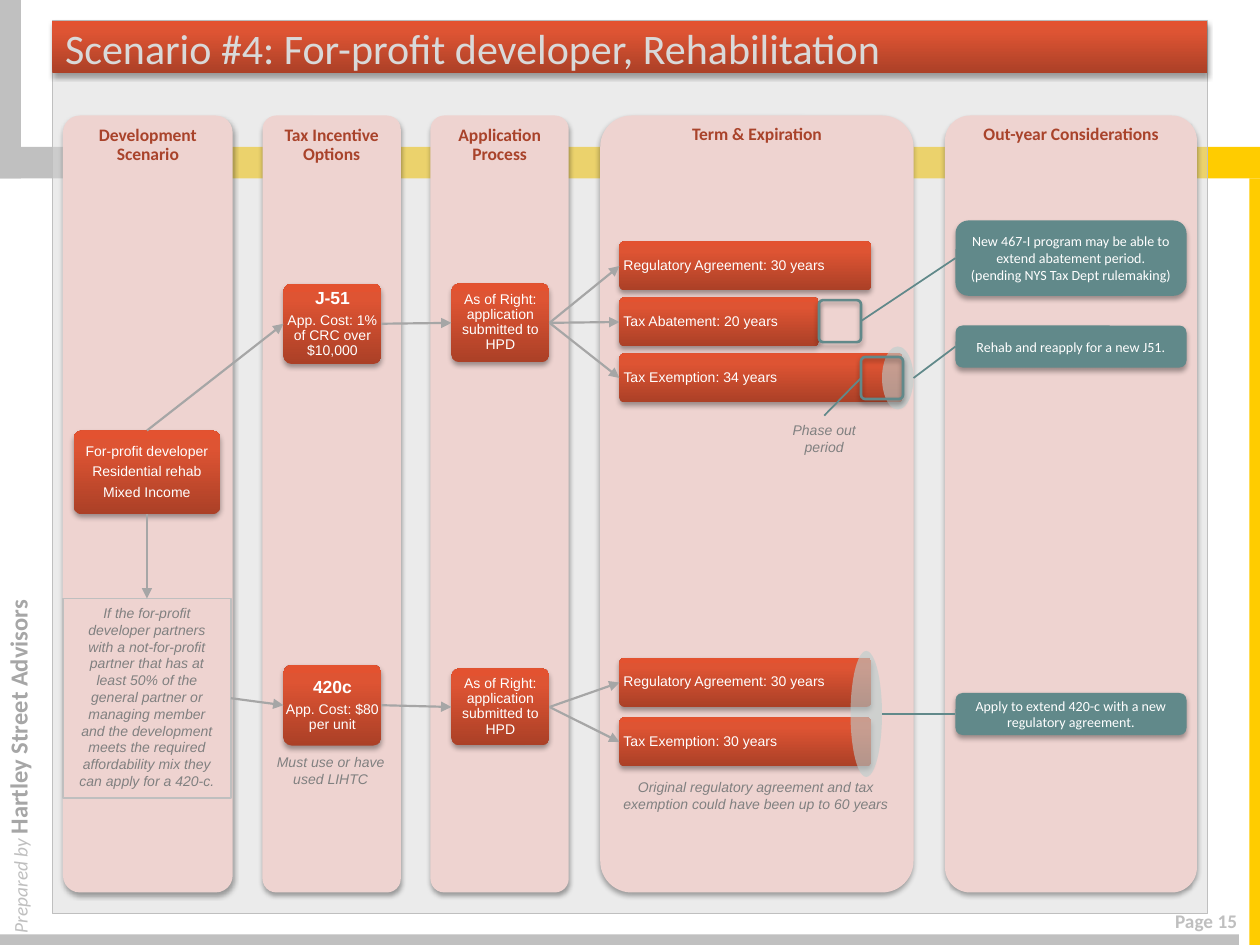
from lxml.etree import SubElement
from pptx import Presentation
from pptx.dml.color import RGBColor
from pptx.enum.shapes import MSO_CONNECTOR, MSO_SHAPE
from pptx.enum.text import MSO_ANCHOR, PP_ALIGN
from pptx.oxml import parse_xml
from pptx.oxml.ns import nsdecls, qn
from pptx.util import Pt

COLORS = {
    "silver": "C0C0C0", "gold": "FFCC00", "panel": "D9D9D9", "border": "BFBFBF",
    "column": "EED3D0", "header": "A9432B", "teal": "61898A", "haze": "BACECE",
    "arrow": "A6A6A6", "note": "808080", "white": "FFFFFF",
    "red_dark": "AB4027", "red_mid": "DE5433", "red_light": "E35230",
}
FONTS = {
    "title": {"name": "Calibri", "size": Pt(24)},
    "header": {"name": "Calibri", "size": Pt(10), "bold": True},
    "heading": {"name": "Arial", "size": Pt(10), "bold": True},
    "card": {"name": "Arial", "size": Pt(8)},
    "note": {"name": "Arial", "size": Pt(8), "italic": True},
    "outlook": {"name": "Calibri", "size": Pt(8)},
    "page": {"name": "Calibri", "size": Pt(11), "bold": True},
    "prepared": {"name": "Calibri", "size": Pt(11), "italic": True},
    "firm": {"name": "Calibri", "size": Pt(14), "bold": True},
}
COLUMN_TOP, COLUMN_HEIGHT = 66, 444
CARD_SPACING = {"line_spacing": 0.9, "space_after": Pt(3)}


def set_attributes(target, values):
    for name, value in values.items():
        setattr(target, name, value)


def rgb(color):
    return RGBColor.from_string(COLORS[color])


def add_run(paragraph, text, font, color):
    run = paragraph.add_run()
    run.text = text
    set_attributes(run.font, FONTS[font])
    run.font.color.rgb = rgb(color)


def write(shape, lines, color, align=PP_ALIGN.CENTER, anchor=MSO_ANCHOR.MIDDLE,
          inset=(7.2, 3.6), spacing=None):
    """Fill a shape with (text, font) lines."""
    frame = shape.text_frame
    across, down = map(Pt, inset)
    set_attributes(frame, {
        "word_wrap": True, "vertical_anchor": anchor, "margin_left": across,
        "margin_right": across, "margin_top": down, "margin_bottom": down})
    for index, (text, font) in enumerate(lines):
        paragraph = frame.add_paragraph() if index else frame.paragraphs[0]
        set_attributes(paragraph, {"alignment": align, **(spacing or {})})
        add_run(paragraph, text, font, color)


def add_shadow(shape):
    effects = shape._element.spPr.get_or_add_effectLst() if hasattr(
        shape._element.spPr, "get_or_add_effectLst") else None
    if effects is None:
        effects = shape._element.spPr.find(qn("a:effectLst"))
    effects.append(parse_xml(
        f'<a:outerShdw {nsdecls("a")} blurRad="39370" dist="22860" dir="5400000" '
        'rotWithShape="0"><a:srgbClr val="000000"><a:alpha val="35000"/>'
        '</a:srgbClr></a:outerShdw>'))


def fill_red(shape):
    """Vertical gradient, dark at the bottom."""
    stops = "".join(
        f'<a:gs pos="{position}000"><a:srgbClr val="{COLORS[color]}"/></a:gs>'
        for position, color in ((0, "red_dark"), (80, "red_mid"), (100, "red_light")))
    shape._element.spPr.find(qn("a:prstGeom")).addnext(parse_xml(
        f'<a:gradFill {nsdecls("a")} rotWithShape="1"><a:gsLst>{stops}</a:gsLst>'
        '<a:lin ang="16200000" scaled="0"/></a:gradFill>'))


def add_box(slide, box, fill=None, kind=MSO_SHAPE.RECTANGLE, line=None, width=0.75,
            alpha=None, corner=None, shadow=False):
    shape = slide.shapes.add_shape(kind, *map(Pt, box))
    shape.shadow.inherit = False
    if corner:
        shape.adjustments[0] = corner
    if fill == "red":
        fill_red(shape)
    elif fill:
        shape.fill.solid()
        shape.fill.fore_color.rgb = rgb(fill)
        if alpha:
            color = shape._element.spPr.find(qn("a:solidFill"))[0]
            SubElement(color, qn("a:alpha")).set("val", str(alpha * 1000))
    else:
        shape.fill.background()
    if line:
        shape.line.color.rgb = rgb(line)
        shape.line.width = Pt(width)
    else:
        shape.line.fill.background()
    if shadow:
        add_shadow(shape)
    return shape


def add_rounded(slide, box, fill=None, corner=0.1, **options):
    return add_box(slide, box, fill, MSO_SHAPE.ROUNDED_RECTANGLE,
                   corner=corner, shadow=True, **options)


def add_card(slide, box, *lines):
    card = add_rounded(slide, box, "red")
    write(card, lines, "white", inset=(0, 0), spacing=CARD_SPACING)
    return card


def add_bar(slide, box, text):
    bar = add_rounded(slide, box, "red")
    write(bar, [(text, "card")], "white", PP_ALIGN.LEFT, inset=(1.5, 0), spacing=CARD_SPACING)
    return bar


def add_note(slide, box, text, line=None):
    note = add_box(slide, box, line=line)
    write(note, [(text, "note")], "note", anchor=MSO_ANCHOR.TOP)
    return note


def edge(shape, side):
    across, down = {"left": (0, 0.5), "right": (1, 0.5), "top": (0.5, 0), "bottom": (0.5, 1)}[side]
    return int(shape.left + across * shape.width), int(shape.top + down * shape.height)


def link(slide, start, end, sides=("right", "left"), color="teal", arrow=False):
    points = edge(start, sides[0]) + edge(end, sides[1])
    connector = slide.shapes.add_connector(MSO_CONNECTOR.STRAIGHT, *points)
    connector.line.color.rgb = rgb(color)
    connector.line.width = Pt(1.25 if arrow else 1)
    if arrow:
        SubElement(connector.line._get_or_add_ln(), qn("a:tailEnd")).set("type", "triangle")
    SubElement(connector._element.spPr, qn("a:effectLst"))


def add_column(slide, left, width, header):
    """Draw a column and return a function that places boxes inside it."""
    box = (left, COLUMN_TOP, width, COLUMN_HEIGHT)
    add_rounded(slide, box, "column")
    label = slide.shapes.add_textbox(*map(Pt, (left, COLUMN_TOP, width, 133)))
    write(label, [(header, "header")], "header", anchor=MSO_ANCHOR.TOP,
          inset=(6, 6), spacing={"line_spacing": 0.9})
    return lambda x, y, w, h: (left + x, COLUMN_TOP + y, w, h)


def frame_page(slide, width, height):
    # Bars around the page
    for box, color in (((0, 84, 48, 18), "silver"), ((54, 84, width - 54, 18), "gold"),
                       ((width - 6, 102, 6, height - 102), "gold"),
                       ((0, height - 6, 708, 6), "silver"), ((0, 0, 12, 102), "silver")):
        add_box(slide, box, color)
    # Page number and author
    page = slide.shapes.add_textbox(*map(Pt, (474, 516, 240, 21)))
    write(page, [("Page 15", "page")], "border", PP_ALIGN.RIGHT, MSO_ANCHOR.TOP)
    author = slide.shapes.add_textbox(*map(Pt, (-124.5, 393, 270, 24.5)))
    author.rotation = 270
    write(author, [("Prepared by ", "prepared")], "border", PP_ALIGN.LEFT, MSO_ANCHOR.TOP)
    add_run(author.text_frame.paragraphs[0], "Hartley Street Advisors", "firm", "arrow")
    # Panel and title band
    add_box(slide, (30, 12, 660, 510), "panel", line="border", alpha=50)
    title = slide.shapes.title
    set_attributes(title, dict(zip(("left", "top", "width", "height"), map(Pt, (30, 12, 660, 30)))))
    slide.shapes._spTree.append(title._element)
    SubElement(title._element.spPr, qn("a:prstGeom")).set("prst", "rect")
    fill_red(title)
    SubElement(title._element.spPr, qn("a:effectLst"))
    add_shadow(title)
    write(title, [("Scenario #4: For-profit developer, Rehabilitation", "title")],
          "panel", PP_ALIGN.LEFT)


def add_development(slide, left, width):
    at = add_column(slide, left, width, "Development Scenario")
    developer = add_card(slide, at(6, 180, 84, 48), *(
        (text, "card") for text in ("For-profit developer", "Residential rehab", "Mixed Income")))
    partner = add_note(
        slide, at(0, 276, 96, 114),
        "If the for-profit developer partners with a not-for-profit partner that has at least "
        "50% of the general partner or managing member and the development meets the required "
        "affordability mix they can apply for a 420-c.", line="border")
    return developer, partner


def add_incentives(slide, left, width):
    at = add_column(slide, left, width, "Tax Incentive Options")
    add_note(slide, at(0, 361, 78, 27), "Must use or have used LIHTC")
    return [add_card(slide, at(12, y, 56, 46), (name, "heading"), (cost, "card"))
            for y, name, cost in ((96, "J-51", "App. Cost: 1% of CRC over $10,000"),
                                  (314, "420c", "App. Cost: $80 per unit"))]


def add_applications(slide, left, width):
    at = add_column(slide, left, width, "Application Process")
    return [add_card(slide, at(12, y, 56, h),
                     ("As of Right: application submitted to HPD", "card"))
            for y, h in ((96, 45), (316, 44))]


def add_terms(slide, left, width):
    at = add_column(slide, left, width, "Term & Expiration")
    bars = [add_bar(slide, at(11, y, w, 28), text) for y, w, text in (
        (72, 144, "Regulatory Agreement: 30 years"), (104, 114, "Tax Abatement: 20 years"),
        (136, 162, "Tax Exemption: 34 years"), (310, 144, "Regulatory Agreement: 30 years"),
        (344, 144, "Tax Exemption: 30 years"))]
    expirations = [add_box(slide, at(x, y, 18, h), "haze", MSO_SHAPE.OVAL, alpha=60)
                   for x, y, h in ((161, 132, 36), (143, 306, 72))]
    extension, phase_out = [add_rounded(slide, at(x, y, 24, 24), line="teal", width=1.5)
                            for x, y in ((125, 105.5), (149, 138))]
    phase_note = add_note(slide, at(101, 171.5, 54, 27), "Phase out period")
    link(slide, phase_note, phase_out, ("top", "left"))
    add_note(slide, at(-1, 375.5, 180, 27),
             "Original regulatory agreement and tax exemption could have been up to 60 years")
    return bars, [extension, *expirations]


def add_outlook(slide, left, width):
    at = add_column(slide, left, width, "Out-year Considerations")
    cards = []
    for y, h, texts in (
            (60, 43, ("New 467-I program may be able to extend abatement period.",
                      "(pending NYS Tax Dept rulemaking)")),
            (120, 24, ("Rehab and reapply for a new J51.",)),
            (330, 24, ("Apply to extend 420-c with a new regulatory agreement.",))):
        card = add_rounded(slide, at(6, y, 132, h), "teal", corner=0.17)
        write(card, [(text, "outlook") for text in texts], "white", inset=(2, 0))
        cards.append(card)
    return cards


def main():
    deck = Presentation()
    set_attributes(deck, {"slide_width": Pt(720), "slide_height": Pt(540)})
    slide = deck.slides.add_slide(deck.slide_layouts[5])
    frame_page(slide, 720, 540)
    # Columns
    developer, partner = add_development(slide, 36, 97)
    j51, c420 = add_incentives(slide, 150, 79)
    j51_filing, c420_filing = add_applications(slide, 246, 79)
    bars, endings = add_terms(slide, 343, 179)
    outlooks = add_outlook(slide, 540, 144)
    # Flow from scenario to term
    link(slide, developer, j51, ("top", "left"), "arrow", True)
    link(slide, developer, partner, ("bottom", "top"), "arrow", True)
    flows = [(partner, c420), (j51, j51_filing), (c420, c420_filing)]
    flows += [(j51_filing, bar) for bar in bars[:3]] + [(c420_filing, bar) for bar in bars[3:]]
    for start, end in flows:
        link(slide, start, end, color="arrow", arrow=True)
    # What follows each ending
    for ending, outlook in zip(endings, outlooks):
        link(slide, ending, outlook)
    deck.save("out.pptx")


if __name__ == "__main__":
    main()
